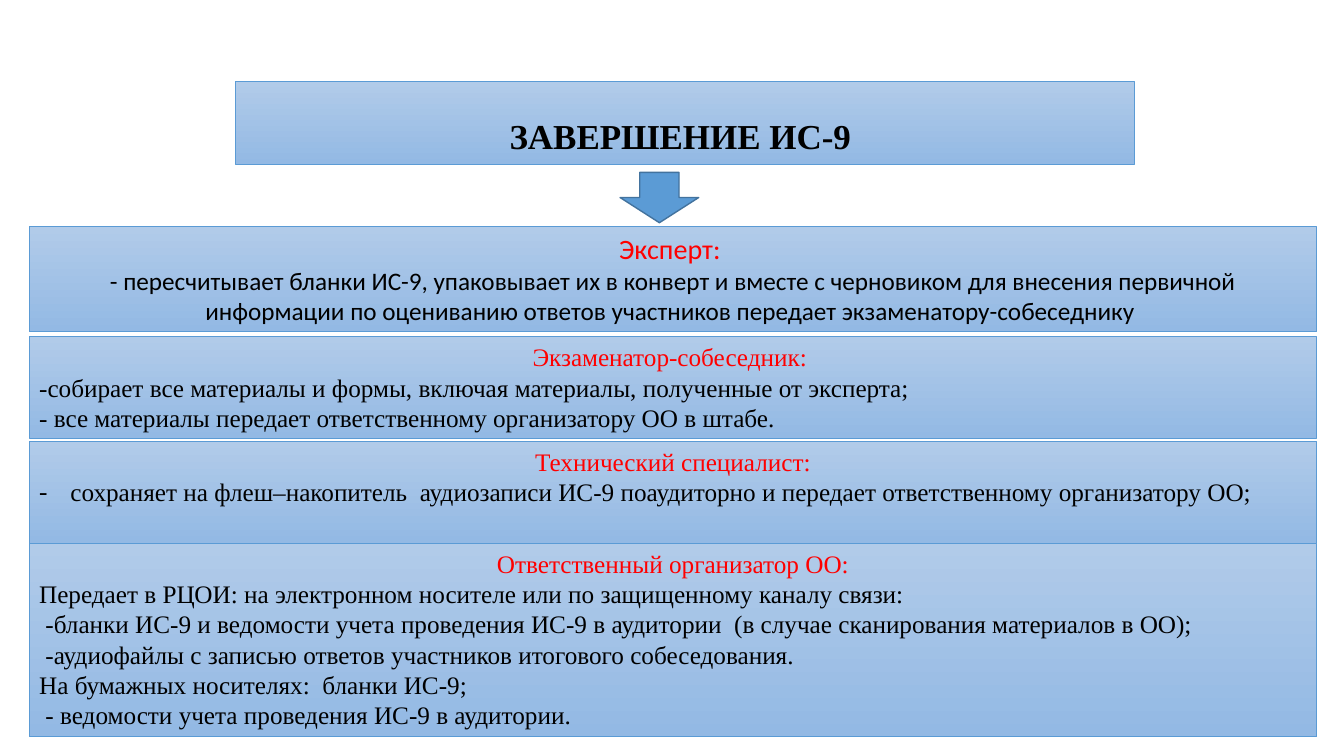
from dataclasses import dataclass

from lxml.etree import SubElement
from pptx import Presentation
from pptx.dml.color import RGBColor
from pptx.enum.shapes import MSO_SHAPE
from pptx.enum.text import MSO_ANCHOR, PP_ALIGN
from pptx.oxml.ns import qn
from pptx.util import Inches, Pt


@dataclass(frozen=True)
class Theme:
    serif: str = "Times New Roman"
    sans: str = "Calibri"
    text: str = "000000"
    role: str = "FF0000"
    panel_top: str = "B1CBE9"
    panel_bottom: str = "93B9E4"
    accent: str = "5B9BD5"
    arrow_edge: str = "43739E"
    title_size: float = 25
    lead_size: float = 20
    body_size: float = 18


class SlideBuilder:
    def __init__(self, slide, theme):
        self.slide = slide
        self.theme = theme

    def outlined(self, preset, box, edge, weight):
        shape = self.slide.shapes.add_shape(preset, *map(Inches, box))
        shape.shadow.inherit = False
        shape.line.color.rgb = RGBColor.from_string(edge)
        shape.line.width = Pt(weight)
        return shape

    def panel(self, box, anchor=MSO_ANCHOR.TOP):
        """Gradient rectangle; returns its text frame."""
        shape = self.outlined(MSO_SHAPE.RECTANGLE, box, self.theme.accent, 0.5)
        shape.fill.gradient()
        shape.fill.gradient_angle = 270
        shades = (self.theme.panel_top, self.theme.panel_bottom)
        for stop, shade in zip(shape.fill.gradient_stops, shades):
            stop.color.rgb = RGBColor.from_string(shade)
        frame = shape.text_frame
        frame.word_wrap = True
        frame.vertical_anchor = anchor
        return frame

    def paragraph(self, frame, text, align, color, font, size, bold=False, dash=False):
        first = frame.paragraphs[0]
        para = first if not first.runs else frame.add_paragraph()
        para.alignment = align
        run = para.add_run()
        run.text = text
        style = {"name": font, "size": Pt(size), "bold": bold}
        for key, value in style.items():
            setattr(run.font, key, value)
        run.font.color.rgb = RGBColor.from_string(color)
        if dash:
            props = para._p.get_or_add_pPr()
            props.set("marL", str(Inches(0.31)))
            props.set("indent", str(-Inches(0.31)))
            SubElement(props, qn("a:buFont")).set("typeface", font)
            SubElement(props, qn("a:buChar")).set("char", "-")

    def title(self, text, box):
        frame = self.panel(box, MSO_ANCHOR.BOTTOM)
        frame.margin_bottom = Inches(0.08)
        self.paragraph(frame, text, PP_ALIGN.CENTER, self.theme.text,
                       self.theme.serif, self.theme.title_size, bold=True)

    def arrow(self, box):
        shape = self.outlined(MSO_SHAPE.DOWN_ARROW, box, self.theme.arrow_edge, 1)
        shape.fill.solid()
        shape.fill.fore_color.rgb = RGBColor.from_string(self.theme.accent)

    def duties(self, box, role, lines, align, font, role_size, dash=False):
        frame = self.panel(box)
        self.paragraph(frame, role, PP_ALIGN.CENTER, self.theme.role, font, role_size)
        for line in lines:
            self.paragraph(frame, line, align, self.theme.text, font,
                           self.theme.body_size, dash=dash)


THEME = Theme()
LEFT, WIDTH = 0.29, 12.77

# Top, height, role, duties, alignment, font, role size, dash bullet
ROLES = [
    (2.25, 1.04, "Эксперт: ", [
        "- пересчитывает бланки ИС-9, упаковывает их в конверт и вместе с черновиком "
        "для внесения первичной информации по оцениванию ответов участников передает "
        "экзаменатору-собеседнику ",
    ], PP_ALIGN.CENTER, THEME.sans, THEME.lead_size, False),
    (3.34, 1.01, "Экзаменатор-собеседник: ", [
        "-собирает все материалы и формы, включая материалы, полученные от эксперта; ",
        "- все материалы передает ответственному организатору ОО в штабе. ",
    ], PP_ALIGN.JUSTIFY, THEME.serif, THEME.body_size, False),
    (4.38, 1.01, "Технический специалист:", [
        "сохраняет на флеш–накопитель  аудиозаписи ИС-9 поаудиторно и передает "
        "ответственному организатору ОО;",
    ], PP_ALIGN.JUSTIFY, THEME.serif, THEME.body_size, True),
    (5.39, 1.92, "Ответственный организатор ОО:", [
        "Передает в РЦОИ: на электронном носителе или по защищенному каналу связи:",
        " -бланки ИС-9 и ведомости учета проведения ИС-9 в аудитории  "
        "(в случае сканирования материалов в ОО);",
        " -аудиофайлы с записью ответов участников итогового собеседования.",
        "На бумажных носителях:  бланки ИС-9;",
        " - ведомости учета проведения ИС-9 в аудитории.",
    ], PP_ALIGN.LEFT, THEME.serif, THEME.body_size, False),
]


def main():
    deck = Presentation()
    deck.slide_width, deck.slide_height = Inches(13.33), Inches(7.5)
    builder = SlideBuilder(deck.slides.add_slide(deck.slide_layouts[6]), THEME)

    # Heading and the arrow to the first role
    builder.title("ЗАВЕРШЕНИЕ ИС-9 ", (2.33, 0.81, 8.92, 0.82))
    builder.arrow((6.15, 1.71, 0.78, 0.5))

    # Duties of each role
    for top, height, *content in ROLES:
        builder.duties((LEFT, top, WIDTH, height), *content)

    deck.save("out.pptx")


if __name__ == "__main__":
    main()
